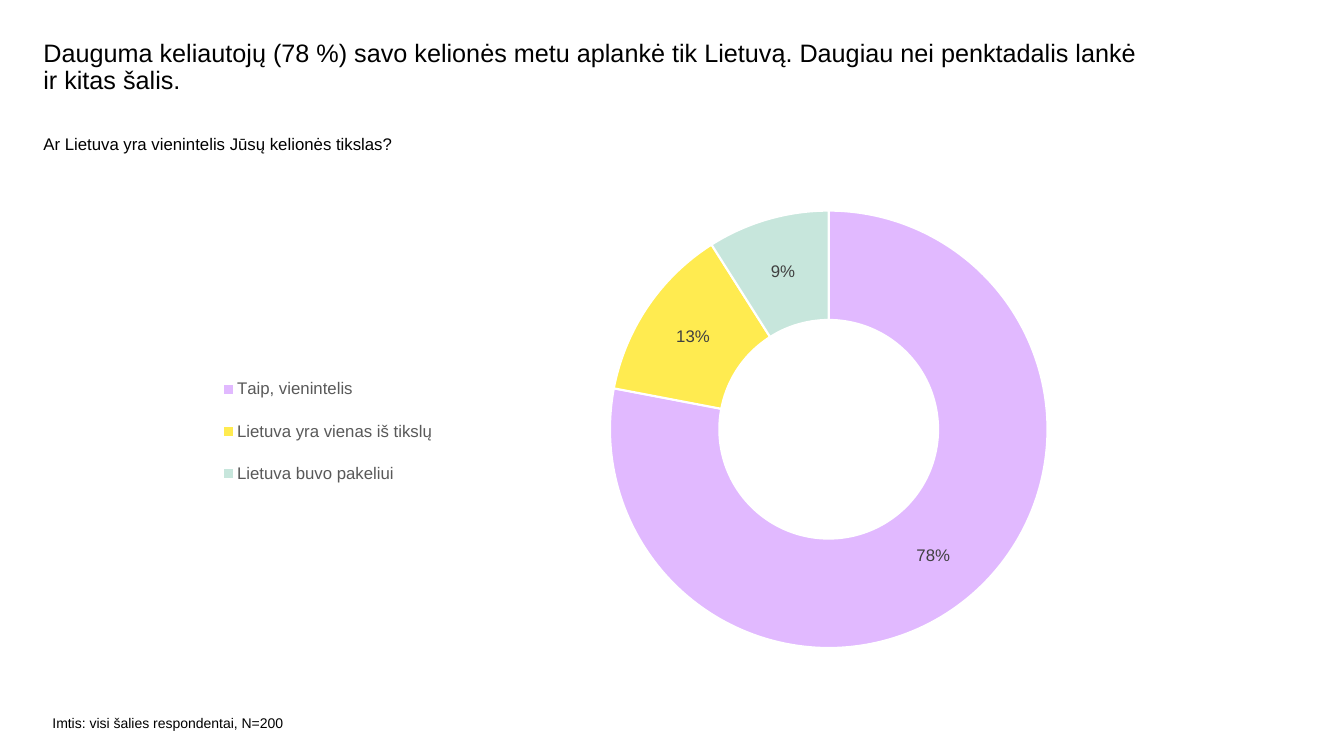
"""Build a slide with a doughnut chart on whether Lithuania is the only travel destination."""
from dataclasses import dataclass

from lxml import etree
from pptx import Presentation
from pptx import util as u
from pptx.chart import data as chart_data
from pptx.dml import color
from pptx.enum import chart as chart_enum, text
from pptx.oxml import ns

FONT = "Arial"
BLACK = "000000"


@dataclass
class Box:
    left: float
    top: float
    width: float
    height: float

    def lengths(self) -> list:
        return [u.Inches(n) for n in (self.left, self.top, self.width, self.height)]


@dataclass
class Note:
    box: Box
    wording: str
    size: float


@dataclass
class Answer:
    label: str
    share: float
    fill: str


TITLE = Note(
    Box(0.43, 0.4, 10.99, 0.6),
    "Dauguma keliautojų (78 %) savo kelionės metu aplankė tik Lietuvą. "
    "Daugiau nei penktadalis lankė ir kitas šalis.",
    18,
)
NOTES = [
    Note(Box(0.43, 1.33, 11.89, 0.61), "Ar Lietuva yra vienintelis Jūsų kelionės tikslas?", 12),
    Note(Box(0.52, 7.09, 2.53, 0.24), "Imtis: visi šalies respondentai, N=200", 10),
]
ANSWERS = [
    Answer("Taip, vienintelis", 0.78, "E1B9FF"),
    Answer("Lietuva yra vienas iš tikslų", 0.13, "FFEB50"),
    Answer("Lietuva buvo pakeliui", 0.09, "C7E6DC"),
]
CHART_BOX = Box(1.7, 1.92, 9.72, 4.61)
RING_BOX = Box(6.05, 2.09, 4.34, 4.34)
LEGEND_BOX = Box(2.05, 3.53, 2.4, 1.5)


def rgb(value: str) -> color.RGBColor:
    return color.RGBColor.from_string(value)


def set_format(target, values: dict) -> None:
    for name, value in values.items():
        setattr(target, name, value)


def set_font(font, size: float, fill: str) -> None:
    set_format(font, {"name": FONT, "size": u.Pt(size), "bold": False})
    font.color.rgb = rgb(fill)


def write_note(shape, note: Note) -> None:
    left, top, width, height = note.box.lengths()
    set_format(shape, {"left": left, "top": top, "width": width, "height": height})
    frame = shape.text_frame
    margins = {f"margin_{side}": 0 for side in ("left", "top", "right", "bottom")}
    set_format(frame, {
        "text": note.wording,
        "word_wrap": True,
        "auto_size": text.MSO_AUTO_SIZE.NONE,
        "vertical_anchor": text.MSO_ANCHOR.TOP,
        **margins,
    })
    paragraph = frame.paragraphs[0]
    paragraph.alignment = text.PP_ALIGN.LEFT
    set_font(paragraph.runs[0].font, note.size, BLACK)


def place_in_chart(parent, index: int, box: Box, inner: bool) -> None:
    for old in parent.findall(ns.qn("c:layout")):
        parent.remove(old)
    layout = etree.Element(ns.qn("c:layout"))
    manual = etree.SubElement(layout, ns.qn("c:manualLayout"))
    settings = {"layoutTarget": "inner"} if inner else {}
    settings |= {
        "xMode": "edge",
        "yMode": "edge",
        "x": (box.left - CHART_BOX.left) / CHART_BOX.width,
        "y": (box.top - CHART_BOX.top) / CHART_BOX.height,
        "w": box.width / CHART_BOX.width,
        "h": box.height / CHART_BOX.height,
    }
    for name, value in settings.items():
        etree.SubElement(manual, ns.qn(f"c:{name}")).set("val", str(value))
    parent.insert(index, layout)


def add_doughnut(slide) -> None:
    data = chart_data.CategoryChartData(number_format="0%")
    data.categories = [answer.label for answer in ANSWERS]
    data.add_series("Series 1", [answer.share for answer in ANSWERS])
    chart = slide.shapes.add_chart(
        chart_enum.XL_CHART_TYPE.DOUGHNUT, *CHART_BOX.lengths(), data
    ).chart
    set_format(chart, {"has_title": False, "has_legend": True})
    set_font(chart.font, 10, BLACK)

    legend = chart.legend
    set_format(legend, {
        "position": chart_enum.XL_LEGEND_POSITION.BOTTOM,
        "include_in_layout": False,
    })
    set_font(legend.font, 12, "595959")
    plot = chart.plots[0]
    plot.vary_by_categories = True
    plot_area = chart.element.find(".//" + ns.qn("c:plotArea"))
    place_in_chart(plot_area, 0, RING_BOX, True)
    place_in_chart(chart.element.find(".//" + ns.qn("c:legend")), 1, LEGEND_BOX, False)

    series = plot.series[0]
    for index, answer in enumerate(ANSWERS):
        point = series.points[index].format
        point.fill.solid()
        point.fill.fore_color.rgb = rgb(answer.fill)
        point.line.color.rgb = rgb("FFFFFF")
        point.line.width = u.Pt(1.5)
    labels = series.data_labels
    set_format(labels, {
        "show_value": True,
        "show_percentage": False,
        "number_format": "0%",
        "number_format_is_linked": False,
    })
    set_font(labels.font, 12, "404040")


def main() -> None:
    presentation = Presentation()
    set_format(presentation, {"slide_width": u.Inches(13.33), "slide_height": u.Inches(7.5)})
    slide = presentation.slides.add_slide(presentation.slide_layouts.get_by_name("Title Only"))
    write_note(slide.shapes.title, TITLE)
    slide.shapes.title.text_frame.paragraphs[0].line_spacing = 0.9
    for note in NOTES:
        write_note(slide.shapes.add_textbox(*note.box.lengths()), note)
    add_doughnut(slide)
    presentation.save("out.pptx")


if __name__ == "__main__":
    main()
